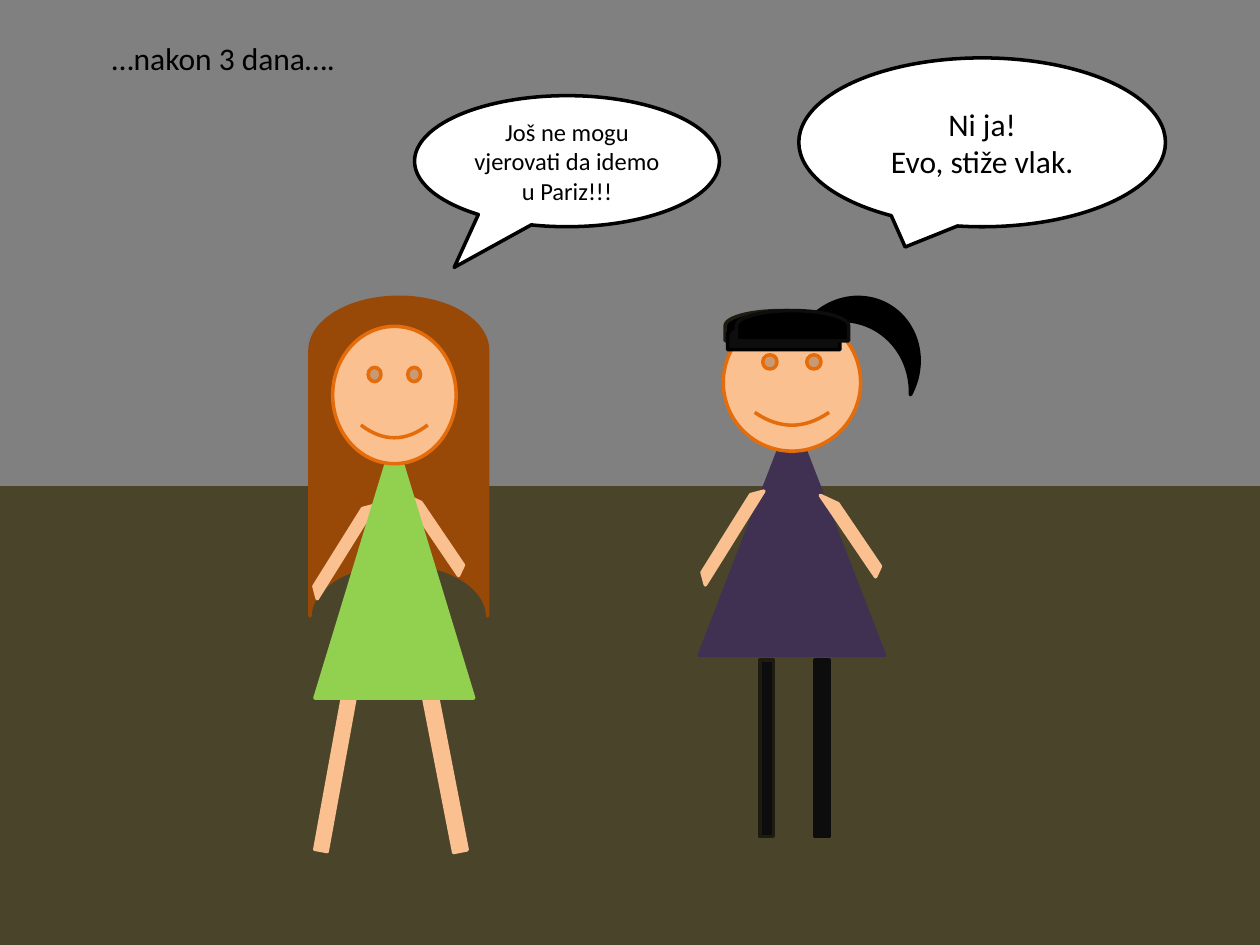
from pptx import Presentation
from pptx.dml.color import RGBColor
from pptx.enum.shapes import MSO_SHAPE
from pptx.enum.text import MSO_ANCHOR, MSO_AUTO_SIZE, PP_ALIGN
from pptx.util import Inches, Pt

WALL = RGBColor(0x80, 0x80, 0x80)
GROUND = RGBColor(0x4A, 0x45, 0x2A)
SKIN = RGBColor(0xFA, 0xC0, 0x90)
FACE_LINE = RGBColor(0xE4, 0x6C, 0x0A)
HAIR = RGBColor(0x98, 0x48, 0x07)
GREEN = RGBColor(0x92, 0xD0, 0x50)
PURPLE = RGBColor(0x40, 0x31, 0x52)
WHITE = RGBColor(0xFF, 0xFF, 0xFF)
BLACK = RGBColor(0, 0, 0)
SOFT_BLACK = RGBColor(0x0D, 0x0D, 0x0D)
OLIVE_BLACK = RGBColor(0x1E, 0x1C, 0x11)

# The slide is a grid of 100 columns by 75 rows
COLS, ROWS = 100, 75
prs = Presentation()
prs.slide_width, prs.slide_height = Inches(10), Inches(7.5)
COL, ROW = prs.slide_width / COLS, prs.slide_height / ROWS


def place(box, x, y, w, h):
    """Turn grid cells, counted from the box's corner, into slide lengths."""
    left, top = box[:2]
    return (round((left + x) * COL), round((top + y) * ROW),
            round(w * COL), round(h * ROW))


def add_part(parent, kind, box, cells, fill, line=None, rot=0, flip=False, adj=()):
    sp = parent.shapes.add_shape(kind, *place(box, *cells))
    sp.shadow.inherit = False
    sp.fill.solid()
    sp.fill.fore_color.rgb = fill
    sp.line.color.rgb = fill if line is None else line
    sp.line.width = Pt(2)
    sp.rotation = rot
    if flip:
        sp._element.spPr.xfrm.set("flipH", "1")
    for i, value in enumerate(adj):
        sp.adjustments[i] = value
    return sp


def write(tf, lines, size=18, align=PP_ALIGN.LEFT, anchor=MSO_ANCHOR.TOP):
    tf.word_wrap = True
    tf.vertical_anchor = anchor
    for i, line in enumerate(lines):
        p = tf.add_paragraph() if i else tf.paragraphs[0]
        p.alignment = align
        r = p.add_run()
        r.text = line
        r.font.name, r.font.size = "Calibri", Pt(size)
        r.font.color.rgb = BLACK


def add_caption(s, box, text):
    tb = s.shapes.add_textbox(*place(box, 0, 0, *box[2:]))
    write(tb.text_frame, [text])
    tb.text_frame.auto_size = MSO_AUTO_SIZE.SHAPE_TO_FIT_TEXT


def add_bubble(s, box, lines, size, tail):
    sp = add_part(s, MSO_SHAPE.OVAL_CALLOUT, box, (0, 0, *box[2:]),
                  WHITE, BLACK, adj=tail)
    write(sp.text_frame, lines, size, PP_ALIGN.CENTER, MSO_ANCHOR.MIDDLE)


def add_background(s, box):
    width, height = box[2:]
    horizon = 38.75
    add_part(s, MSO_SHAPE.RECTANGLE, box, (0, 0, width, horizon), WALL)
    add_part(s, MSO_SHAPE.RECTANGLE, box, (0, horizon, width, height - horizon), GROUND)


def add_arms(g, box, left, right):
    """Both arms; left and right are the corners of their frames."""
    add_part(g, MSO_SHAPE.DIAGONAL_STRIPE, box, (*right, 4, 6.7), SKIN,
             rot=115, adj=[0.77])
    add_part(g, MSO_SHAPE.DIAGONAL_STRIPE, box, (*left, 6, 6.4), SKIN,
             rot=255.1, flip=True, adj=[0.83])


def add_face(g, box, cells):
    add_part(g, MSO_SHAPE.SMILEY_FACE, box, cells, SKIN, FACE_LINE)


def add_long_haired_girl(s, box):
    g = s.shapes.add_group_shape()
    # Legs
    add_part(g, MSO_SHAPE.RECTANGLE, box, (1.6, 31.6, 1, 12.5), SKIN, rot=10.3)
    add_part(g, MSO_SHAPE.RECTANGLE, box, (10.1, 29.7, 1.1, 14.5), SKIN,
             rot=349.1, flip=True)
    # Hair, arms, dress and face
    add_part(g, MSO_SHAPE.FLOWCHART_STORED_DATA, box, (-5.5, 5.7, 25.3, 14.1),
             HAIR, rot=90)
    add_arms(g, box, left=(0, 17.1), right=(7.7, 15.6))
    add_part(g, MSO_SHAPE.FLOWCHART_EXTRACT, box, (0.5, 11.2, 12.6, 20.7), GREEN)
    add_face(g, box, (1.9, 2.4, 9.8, 10.9))


def add_girl_with_cap(s, box):
    g = s.shapes.add_group_shape()
    # Dress, face and legs
    add_part(g, MSO_SHAPE.FLOWCHART_EXTRACT, box, (0, 9.5, 14.7, 19), PURPLE)
    add_face(g, box, (1.9, 1.4, 10.9, 10.9))
    for x, line in ((4.8, OLIVE_BLACK), (9.2, SOFT_BLACK)):
        add_part(g, MSO_SHAPE.RECTANGLE, box, (x, 28.9, 1.1, 14), SOFT_BLACK, line)
    # Cap in three layers, with the ponytail under the top one
    cap = [((5.3, -2.1), BLACK, OLIVE_BLACK), ((5.5, -1.4), SOFT_BLACK, BLACK),
           ((6.2, -2.1), BLACK, SOFT_BLACK)]
    for i, (corner, fill, line) in enumerate(cap):
        if i == len(cap) - 1:
            add_part(g, MSO_SHAPE.MOON, box, (10.9, -2, 5.4, 10.1), BLACK,
                     rot=118.4, adj=[0.4])
        add_part(g, MSO_SHAPE.FLOWCHART_DELAY, box, (*corner, 2.4, 8.9),
                 fill, line, rot=270)
    add_arms(g, box, left=(-0.2, 16), right=(9.8, 15.7))


def main():
    s = prs.slides.add_slide(prs.slide_layouts[6])
    add_background(s, (0, 0, COLS, ROWS))
    add_long_haired_girl(s, (24.5, 23.5, 14.5, 44.5))
    add_caption(s, (7.9, 2.6, 79.5, 4), "…nakon 3 dana….")
    add_bubble(s, (32.9, 7.6, 24.2, 10.4),
               ["Još ne mogu vjerovati da idemo u Pariz!!!"], 14, (-0.37, 0.81))
    add_bubble(s, (63.4, 4.6, 29.1, 13.4),
               ["Ni ja!", "Evo, stiže vlak."], 18, (-0.21, 0.62))
    add_girl_with_cap(s, (55.5, 23.5, 17.5, 43))
    prs.save("out.pptx")


if __name__ == "__main__":
    main()
